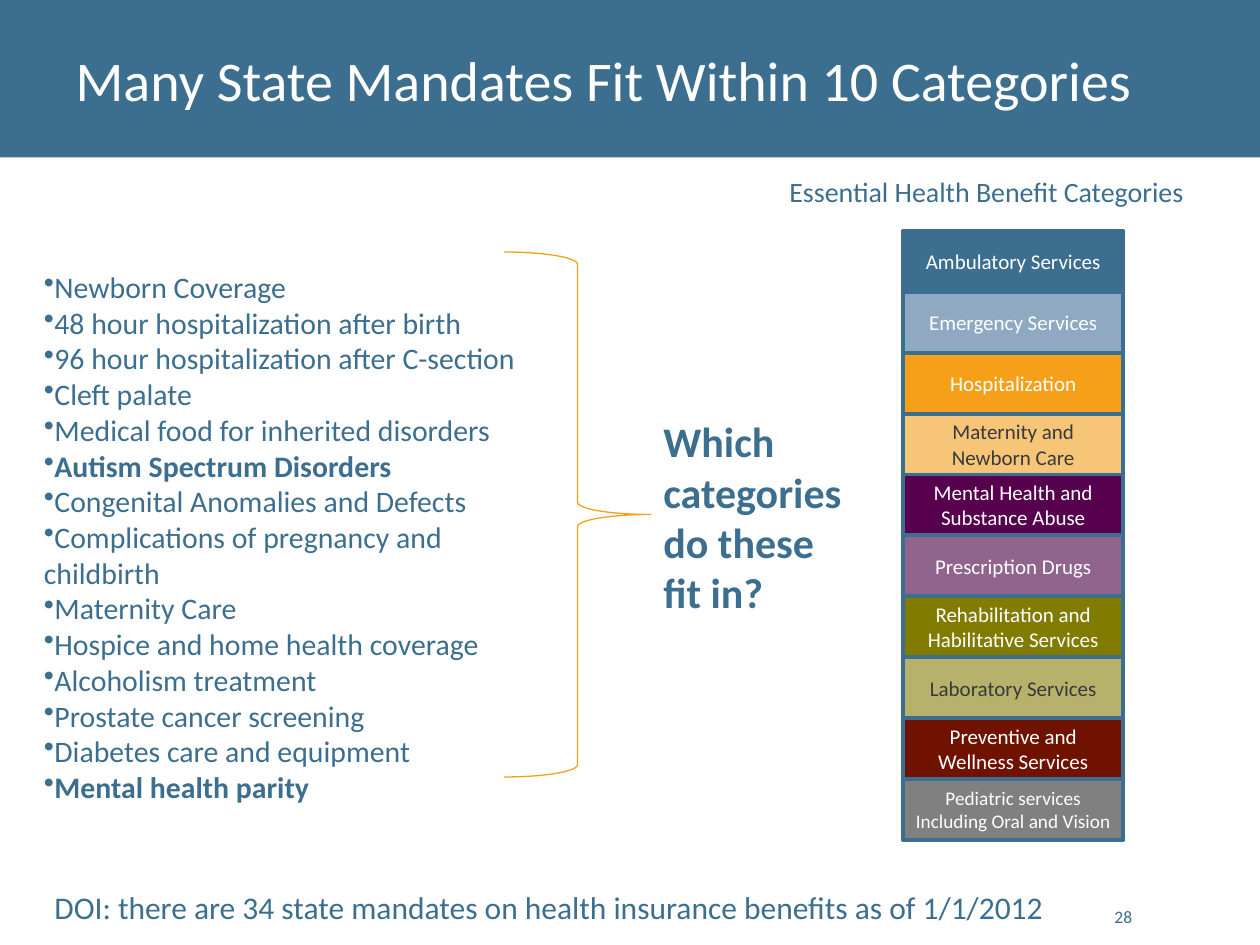
from pptx import Presentation
from pptx.dml.color import RGBColor as Rgb
from pptx.enum.shapes import MSO_SHAPE as Kind
from pptx.enum.text import MSO_ANCHOR as Anchor, MSO_AUTO_SIZE as Fit, PP_ALIGN as Align
from pptx.oxml.ns import qn
from pptx.util import Inches, Pt
from lxml.etree import SubElement as Sub

BLUE = Rgb(0x3B, 0x6E, 0x8F)
MIST = Rgb(0x8E, 0xA9, 0xC1)
GOLD = Rgb(0xF6, 0xA0, 0x1A)
SAND = Rgb(0xF7, 0xC5, 0x77)
PLUM = Rgb(0x56, 0x00, 0x4E)
MAUVE = Rgb(0x90, 0x64, 0x8D)
OLIVE = Rgb(0x81, 0x7C, 0x00)
KHAKI = Rgb(0xB7, 0xB2, 0x6B)
RUST = Rgb(0x6F, 0x12, 0x00)
GREY = Rgb(0x80, 0x80, 0x80)
INK = Rgb(0x38, 0x39, 0x3A)
WHITE = Rgb(0xFF, 0xFF, 0xFF)

STACK = [
    ("Ambulatory Services", BLUE, WHITE, 12),
    ("Emergency Services", MIST, WHITE, 12),
    ("Hospitalization", GOLD, WHITE, 12),
    ("Maternity and Newborn Care", SAND, INK, 12),
    ("Mental Health and Substance Abuse", PLUM, WHITE, 12),
    ("Prescription Drugs", MAUVE, WHITE, 12),
    ("Rehabilitation and Habilitative Services", OLIVE, WHITE, 12),
    ("Laboratory Services", KHAKI, INK, 12),
    ("Preventive and Wellness Services", RUST, WHITE, 12),
    ("Pediatric services Including Oral and Vision", GREY, WHITE, 11),
]
MANDATES = [
    "Newborn Coverage",
    "48 hour hospitalization after birth",
    "96 hour hospitalization after C-section",
    "Cleft palate",
    "Medical food for inherited disorders",
    "Autism Spectrum Disorders",
    "Congenital Anomalies and Defects",
    "Complications of pregnancy and childbirth",
    "Maternity Care",
    "Hospice and home health coverage",
    "Alcoholism treatment",
    "Prostate cancer screening",
    "Diabetes care and equipment",
    "Mental health parity",
]
STRONG = {"Autism Spectrum Disorders", "Mental health parity"}


class Sheet:
    face = "Calibri"
    cols, rows = 120, 90

    def __init__(self, deck):
        self.deck = deck
        self.slide = deck.slides.add_slide(deck.slide_layouts[5])
        self.shapes = self.slide.shapes

    def place(self, col, row, wide, high):
        dx = self.deck.slide_width / self.cols
        dy = self.deck.slide_height / self.rows
        return [round(n) for n in (col * dx, row * dy, wide * dx, high * dy)]

    def label(self, frame, lines, size, color=BLUE, align=Align.LEFT,
              strong=(), dots=False, **form):
        look = {"word_wrap": True, "vertical_anchor": Anchor.TOP, **form}
        for key, val in look.items():
            setattr(frame, key, val)
        for num, line in enumerate(lines):
            para = frame.add_paragraph() if num else frame.paragraphs[0]
            para.text = line
            para.alignment = align
            if dots:
                Sub(para._p.get_or_add_pPr(), qn("a:buChar"), char="•")
            font = para.font
            font.color.rgb = color
            style = {"name": self.face, "size": Pt(size), "bold": line in strong}
            for key, val in style.items():
                setattr(font, key, val)

    def title(self, text, *box):
        head = self.shapes.title
        head.left, head.top, head.width, head.height = self.place(*box)
        self.label(head.text_frame, [text], 32, WHITE, vertical_anchor=Anchor.MIDDLE)

    def text(self, lines, size, *box, **form):
        item = self.shapes.add_textbox(*self.place(*box))
        self.label(item.text_frame, lines, size, **form)

    def shape(self, kind, *box, fill=None, line=None, width=0.75, home=None):
        item = (home or self.shapes).add_shape(kind, *self.place(*box))
        item.shadow.inherit = False
        for part, color in ((item.fill, fill), (item.line.fill, line)):
            if color is None:
                part.background()
            else:
                part.solid()
                part.fore_color.rgb = color
        if line is not None:
            item.line.width = Pt(width)
        return item

    def band(self, *box):
        item = self.shape(Kind.RECTANGLE, *box, fill=BLUE)
        self.shapes.title._element.addprevious(item._element)

    def stack(self, cells, col, row, wide, high):
        home = self.shapes.add_group_shape().shapes
        step = high / len(cells)
        for num, (text, fill, color, size) in enumerate(cells):
            item = self.shape(Kind.RECTANGLE, col, row + num * step, wide, step,
                              fill=fill, line=BLUE, width=2.25, home=home)
            self.label(item.text_frame, [text], size, color, Align.CENTER,
                       vertical_anchor=Anchor.MIDDLE)


def main():
    deck = Presentation()
    deck.slide_width, deck.slide_height = Inches(10), Inches(7.5)
    page = Sheet(deck)
    page.band(0, 0, 120, 15)
    page.title("Many State Mandates Fit Within 10 Categories", 6, 0, 108, 15)
    page.stack(STACK, 86, 22, 21, 58)
    grow = {"auto_size": Fit.SHAPE_TO_FIT_TEXT}
    page.text(["Essential Health Benefit Categories"], 16, 74, 16, 43, 4.4, **grow)
    page.text(MANDATES, 17, 3, 25, 48.5, 52.7, strong=STRONG, dots=True, **grow)
    ask = "Which categories do these fit in?"
    page.text([ask], 24, 62, 39, 20, 20.6, strong={ask}, **grow)
    page.shape(Kind.RIGHT_BRACE, 48, 24, 14, 50, line=GOLD)
    page.text(["DOI: there are 34 state mandates on health insurance benefits as of 1/1/2012"],
              18, 4, 84, 97.8, 4.8, word_wrap=False, **grow)
    page.text(["28"], 10, 104.2, 84.1, 4.8, 4.8, align=Align.RIGHT,
              vertical_anchor=Anchor.BOTTOM)
    deck.save("out.pptx")


if __name__ == "__main__":
    main()
